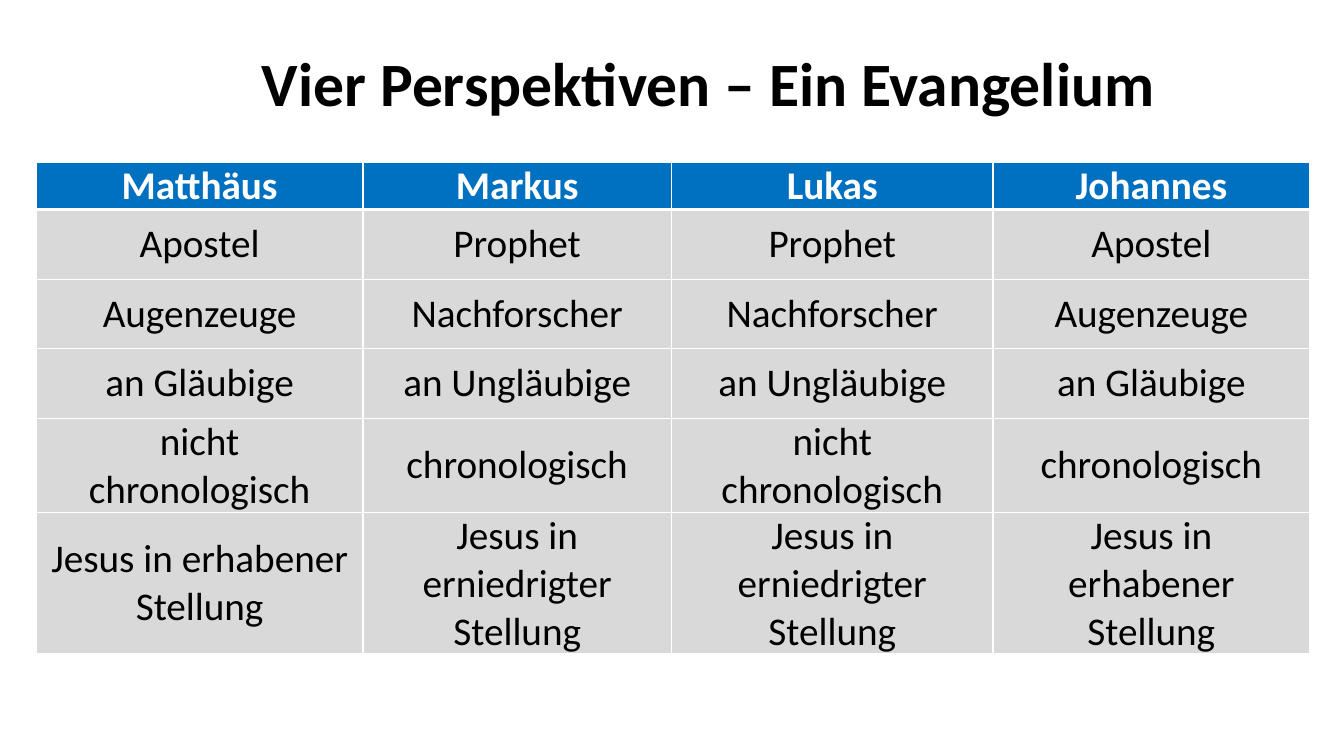
import pptx
import pptx.dml.color
import pptx.enum.text
import pptx.oxml.ns
import pptx.util
from dataclasses import dataclass
from lxml import etree

Inches = pptx.util.Inches
Pt = pptx.util.Pt


@dataclass(frozen=True)
class Theme:
    font: str = "Calibri"
    title_size: int = 44
    table_size: int = 28
    text: str = "000000"
    header_text: str = "FFFFFF"
    header_fill: str = "0070C0"
    body_fill: str = "D9D9D9"
    border: str = "FFFFFF"


theme = Theme()


def add_run(paragraph, text, size, color, bold):
    paragraph.alignment = pptx.enum.text.PP_ALIGN.CENTER
    run = paragraph.add_run()
    run.text = text
    run.font.name = theme.font
    run.font.size = Pt(size)
    run.font.bold = bold
    run.font.color.rgb = pptx.dml.color.RGBColor.from_string(color)


def add_border(cell, side, width):
    properties = cell._tc.get_or_add_tcPr()
    line = etree.SubElement(properties, pptx.oxml.ns.qn(f"a:ln{side}"), w=str(Pt(width)))
    fill = etree.SubElement(line, pptx.oxml.ns.qn("a:solidFill"))
    etree.SubElement(fill, pptx.oxml.ns.qn("a:srgbClr"), val=theme.border)


presentation = pptx.Presentation()
presentation.slide_width = Inches(13.33)
presentation.slide_height = Inches(7.5)
slide = presentation.slides.add_slide(presentation.slide_layouts[6])

# Title
title = slide.shapes.add_textbox(Inches(1.28), Inches(0.41), Inches(11.5), Inches(0.89))
title.text_frame.word_wrap = True
title.text_frame.vertical_anchor = pptx.enum.text.MSO_ANCHOR.MIDDLE
title_paragraph = title.text_frame.paragraphs[0]
title_paragraph.line_spacing = 0.9
add_run(title_paragraph, "Vier Perspektiven – Ein Evangelium", theme.title_size, theme.text, True)

# Comparison of the four gospels
gospels = [
    ["Matthäus", "Markus", "Lukas", "Johannes"],
    ["Apostel", "Prophet", "Prophet", "Apostel"],
    ["Augenzeuge", "Nachforscher", "Nachforscher", "Augenzeuge"],
    ["an Gläubige", "an Ungläubige", "an Ungläubige", "an Gläubige"],
    ["nicht chronologisch", "chronologisch", "nicht chronologisch", "chronologisch"],
    ["Jesus in erhabener Stellung", "Jesus in erniedrigter Stellung",
     "Jesus in erniedrigter Stellung", "Jesus in erhabener Stellung"],
]
column_widths = [3.24, 3.06, 3.19, 3.14]
header_height, body_height = 0.47, 0.69

table = slide.shapes.add_table(
    len(gospels), len(column_widths),
    Inches(0.36), Inches(1.61), Inches(12.62), Inches(4.87),
).table
for column, width in zip(table.columns, column_widths):
    column.width = Inches(width)

for row_index, labels in enumerate(gospels):
    is_header = row_index == 0
    table.rows[row_index].height = Inches(header_height if is_header else body_height)
    for column_index, label in enumerate(labels):
        cell = table.cell(row_index, column_index)
        cell.margin_left = cell.margin_right = Inches(0.14)
        cell.margin_top = cell.margin_bottom = 0
        cell.vertical_anchor = pptx.enum.text.MSO_ANCHOR.MIDDLE

        # A thick rule separates the header from the body
        add_border(cell, "L", 1)
        add_border(cell, "R", 1)
        add_border(cell, "T", 3 if row_index == 1 else 1)
        add_border(cell, "B", 3 if is_header else 1)

        cell.fill.solid()
        cell.fill.fore_color.rgb = pptx.dml.color.RGBColor.from_string(
            theme.header_fill if is_header else theme.body_fill)
        add_run(cell.text_frame.paragraphs[0], label, theme.table_size,
                theme.header_text if is_header else theme.text, is_header)

presentation.save("out.pptx")
